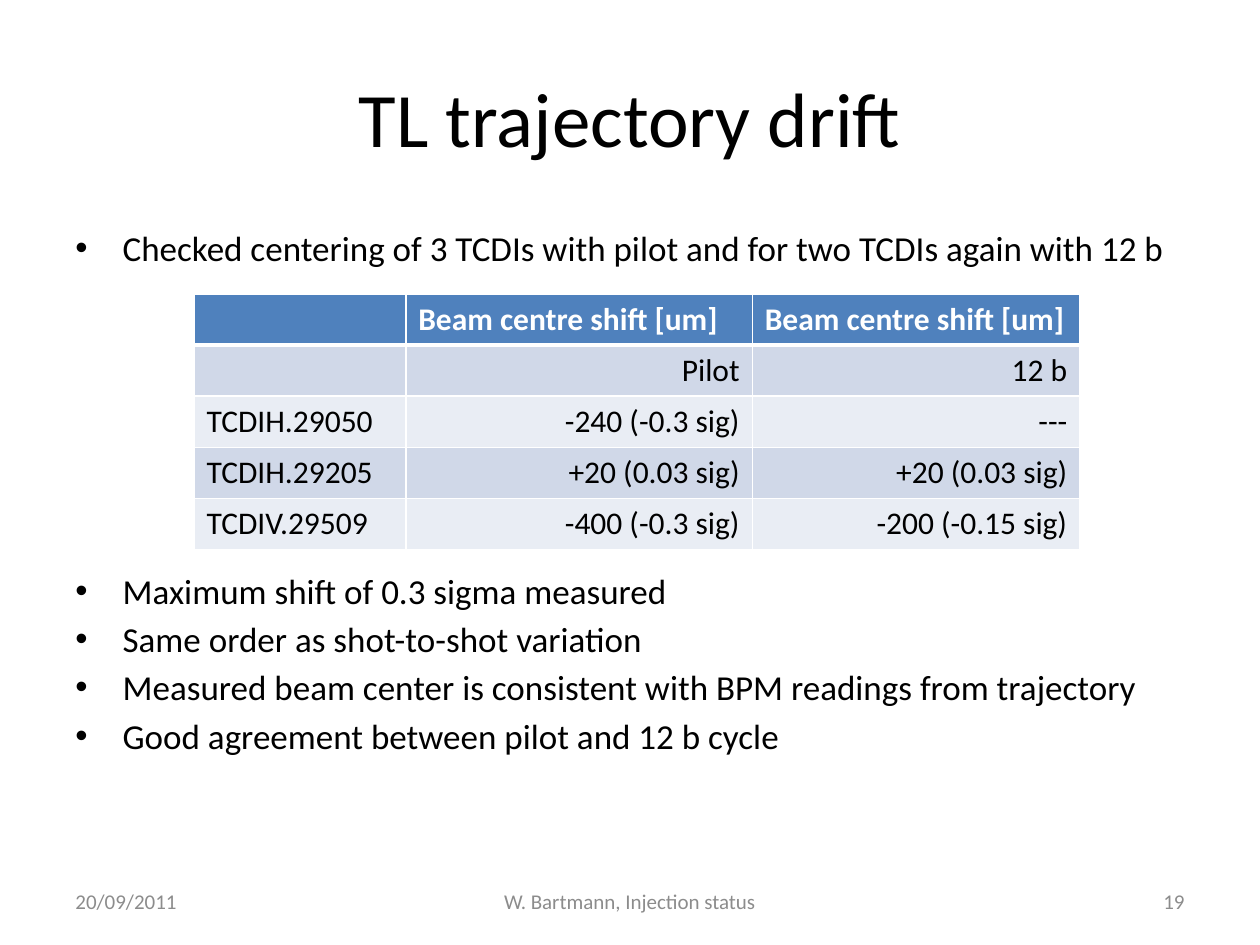
import pptx
import pptx.dml.color
import pptx.enum.text
import pptx.oxml
import pptx.oxml.ns
import pptx.util

Pt = pptx.util.Pt
ALIGN = pptx.enum.text.PP_ALIGN
ANCHOR = pptx.enum.text.MSO_ANCHOR

FONT = "Calibri"
BLACK, WHITE, GREY = "000000", "FFFFFF", "8C8C8C"
HEADER_FILL, BAND_FILLS = "4F81BD", ("D0D8E8", "E9EDF4")

FINDINGS = [
    "Checked centering of 3 TCDIs with pilot and for two TCDIs again with 12 b",
    "Maximum shift of 0.3 sigma measured",
    "Same order as shot-to-shot variation",
    "Measured beam center is consistent with BPM readings from trajectory",
    "Good agreement between pilot and 12 b cycle",
]
SHIFTS = [
    ["", "Beam centre shift [um]", "Beam centre shift [um]"],
    ["", "Pilot", "12 b"],
    ["TCDIH.29050", "-240 (-0.3 sig)", "---"],
    ["TCDIH.29205", "+20 (0.03 sig)", "+20 (0.03 sig)"],
    ["TCDIV.29509", "-400 (-0.3 sig)", "-200 (-0.15 sig)"],
]


def rgb(value):
    return pptx.dml.color.RGBColor.from_string(value)


def write(paragraph, text, size, color, align=ALIGN.LEFT, bold=False):
    paragraph.alignment = align
    run = paragraph.add_run()
    run.text = text
    for name, value in {"name": FONT, "size": Pt(size), "bold": bold}.items():
        setattr(run.font, name, value)
    run.font.color.rgb = rgb(color)


def add_frame(slide, box, anchor):
    frame = slide.shapes.add_textbox(*map(Pt, box)).text_frame
    frame.word_wrap = True
    frame.vertical_anchor = anchor
    return frame


def add_line(slide, box, text, size, color, align):
    frame = add_frame(slide, box, ANCHOR.MIDDLE)
    write(frame.paragraphs[0], text, size, color, align)


def add_bullet(paragraph, indent):
    properties = paragraph._p.get_or_add_pPr()
    properties.set("marL", str(Pt(indent)))
    properties.set("indent", str(-Pt(indent)))
    for tag, name, value in (("buFont", "typeface", "Arial"), ("buChar", "char", "•")):
        bullet = pptx.oxml.parse_xml(
            f'<a:{tag} {pptx.oxml.ns.nsdecls("a")} {name}="{value}"/>')
        properties.append(bullet)


def add_findings(slide, box, table_gap):
    """Bulleted list that leaves table_gap points free after its first item."""
    frame = add_frame(slide, box, ANCHOR.TOP)
    for index, finding in enumerate(FINDINGS):
        paragraph = frame.paragraphs[0] if index == 0 else frame.add_paragraph()
        write(paragraph, finding, 20, BLACK)
        paragraph.space_before = Pt(3.6 + (table_gap if index == 1 else 0))
        add_bullet(paragraph, 27)


def set_borders(cell, widths):
    properties = cell._tc.get_or_add_tcPr()
    for position, (side, width) in enumerate(widths.items()):
        border = pptx.oxml.parse_xml(
            f'<a:ln{side} {pptx.oxml.ns.nsdecls("a")} w="{Pt(width)}">'
            f'<a:solidFill><a:srgbClr val="{WHITE}"/></a:solidFill></a:ln{side}>')
        properties.insert(position, border)


def add_shift_table(slide, box, column_widths):
    table = slide.shapes.add_table(
        len(SHIFTS), len(column_widths), *map(Pt, box)).table
    for column, width in zip(table.columns, column_widths):
        column.width = Pt(width)
    for r, values in enumerate(SHIFTS):
        header = r == 0
        for c, value in enumerate(values):
            cell = table.cell(r, c)
            cell.fill.solid()
            cell.fill.fore_color.rgb = rgb(
                HEADER_FILL if header else BAND_FILLS[(r - 1) % 2])
            set_borders(cell, {"L": 1, "R": 1, "T": 3 if r == 1 else 1,
                               "B": 3 if header else 1})
            if value:
                align = ALIGN.LEFT if header or c == 0 else ALIGN.RIGHT
                write(cell.text_frame.paragraphs[0], value, 18,
                      WHITE if header else BLACK, align, bold=header)


def add_footer(slide, box):
    left, top, width, height = box
    side, middle = 168, 228
    parts = [
        ("20/09/2011", left, side, ALIGN.LEFT),
        ("W. Bartmann, Injection status", left + (width - middle) / 2, middle,
         ALIGN.CENTER),
        ("19", left + width - side, side, ALIGN.RIGHT),
    ]
    for text, x, part_width, align in parts:
        add_line(slide, (x, top, part_width, height), text, 12, GREY, align)


def main():
    deck = pptx.Presentation()
    deck.slide_width, deck.slide_height = Pt(720), Pt(540)
    slide = deck.slides.add_slide(deck.slide_layouts[6])
    add_line(slide, (36, 21.6, 648, 90), "TL trajectory drift", 44, BLACK,
             ALIGN.CENTER)
    add_findings(slide, (36, 126, 648, 356.4), table_gap=168)
    add_footer(slide, (36, 500.5, 648, 28.75))
    add_shift_table(slide, (110.9, 168, 506.2, 146), (121, 198, 187.2))
    deck.save("out.pptx")


if __name__ == "__main__":
    main()
